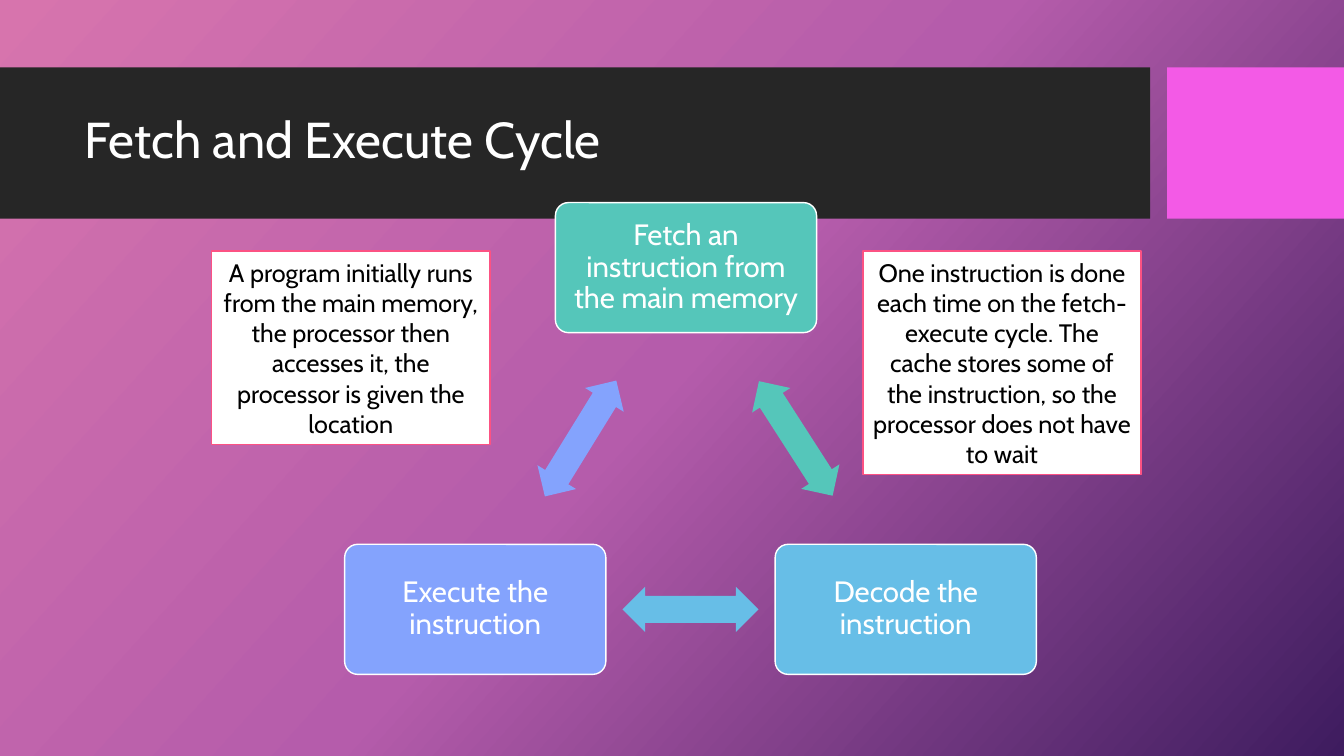
from copy import deepcopy
from math import atan2, degrees

from pptx import Presentation
from pptx.dml.color import RGBColor
from pptx.enum.shapes import MSO_SHAPE as SHAPE
from pptx.enum.text import MSO_ANCHOR as ANCHOR, MSO_AUTO_SIZE as AUTO, PP_ALIGN as ALIGN
from pptx.util import Inches, Pt

COLORS = {
    "white": "FFFFFF", "black": "000000", "band": "262626", "tile": "F35AE6",
    "teal": "55C6BA", "sky": "67BEE7", "blue": "84A3FD", "border": "FC5283",
}
BACKGROUND = [(0, "D774AD"), (0.5, "B55CAB"), (1, "3E1C5F")]
FONT = "Cabin"

# Lengths are percentages of the slide's width and height.
TITLE = ("Fetch and Execute Cycle", (5.55, 10.93, 78.83, 15.73))
BANDS = [("band", (0, 8.93, 85.58, 20)), ("tile", (86.85, 8.93, 13.15, 20))]
STEPS = [
    ("Fetch an instruction from the main memory", "teal", (51.04, 35.4)),
    ("Decode the instruction", "sky", (67.39, 80.6)),
    ("Execute the instruction", "blue", (35.36, 80.6)),
]
STEP_SIZE = (19.43, 17.2)
ARROW_SIZE = (10.13, 6)
NOTES = [
    ("A program initially runs from the main memory, the processor then "
     "accesses it, the processor is given the location", (15.75, 33.2, 20.7, 25.6)),
    ("One instruction is done each time on the fetch-execute cycle. The cache "
     "stores some of the instruction, so the processor does not have to wait",
     (64.2, 33.2, 20.7, 29.6)),
]

prs = Presentation()
prs.slide_width, prs.slide_height = Inches(13.33), Inches(7.5)
W, H = prs.slide_width, prs.slide_height
slide = prs.slides.add_slide(prs.slide_layouts[5])


def rgb(name):
    return RGBColor.from_string(COLORS[name])


def place(box):
    return [int(share * side / 100) for share, side in zip(box, (W, H, W, H))]


def centred(centre, size):
    return (centre[0] - size[0] / 2, centre[1] - size[1] / 2, *size)


def add_box(kind, box, fill, line=None):
    sp = slide.shapes.add_shape(kind, *place(box))
    sp.shadow.inherit = False
    sp.fill.solid()
    sp.fill.fore_color.rgb = rgb(fill)
    if line:
        sp.line.color.rgb = rgb(line)
        sp.line.width = Pt(1)
    else:
        sp.line.fill.background()
    return sp


def write(sp, text, size, color="white", align=ALIGN.CENTER, spacing=1, inset=(0.1, 0.05)):
    tf = sp.text_frame
    tf.word_wrap = True
    tf.auto_size = AUTO.NONE
    tf.vertical_anchor = ANCHOR.MIDDLE
    tf.margin_left = tf.margin_right = Inches(inset[0])
    tf.margin_top = tf.margin_bottom = Inches(inset[1])
    p = tf.paragraphs[0]
    p.alignment = align
    p.line_spacing = spacing
    r = p.add_run()
    r.text = text
    r.font.name = FONT
    r.font.size = Pt(size)
    r.font.color.rgb = rgb(color)


fill = slide.background.fill
fill.gradient()
fill.gradient_angle = 360 - 42
first = fill.gradient_stops[0]._gs
first.addnext(deepcopy(first))
for stop, (position, color) in zip(fill.gradient_stops, BACKGROUND):
    stop.position = position
    stop.color.rgb = RGBColor.from_string(color)

for color, box in BANDS:
    add_box(SHAPE.RECTANGLE, box, color)

for i, (text, color, centre) in enumerate(STEPS):
    sp = add_box(SHAPE.ROUNDED_RECTANGLE, centred(centre, STEP_SIZE), color, "white")
    sp.adjustments[0] = 0.1
    write(sp, text, 21, spacing=0.9, inset=(0.13, 0.13))

    target = STEPS[(i + 1) % len(STEPS)][2]
    middle = [(a + b) / 2 for a, b in zip(centre, target)]
    arrow = add_box(SHAPE.LEFT_RIGHT_ARROW, centred(middle, ARROW_SIZE), color)
    arrow.adjustments[0], arrow.adjustments[1] = 0.6, 0.5
    dx, dy = (target[0] - centre[0]) * W, (target[1] - centre[1]) * H
    arrow.rotation = degrees(atan2(dy, dx)) % 360

text, box = TITLE
title = slide.shapes.title
title.left, title.top, title.width, title.height = place(box)
write(title, text, 36, align=ALIGN.LEFT, spacing=0.9)
slide.shapes._spTree.append(title._element)

for text, box in NOTES:
    write(add_box(SHAPE.RECTANGLE, box, "white", "border"), text, 18, "black")

prs.save("out.pptx")
